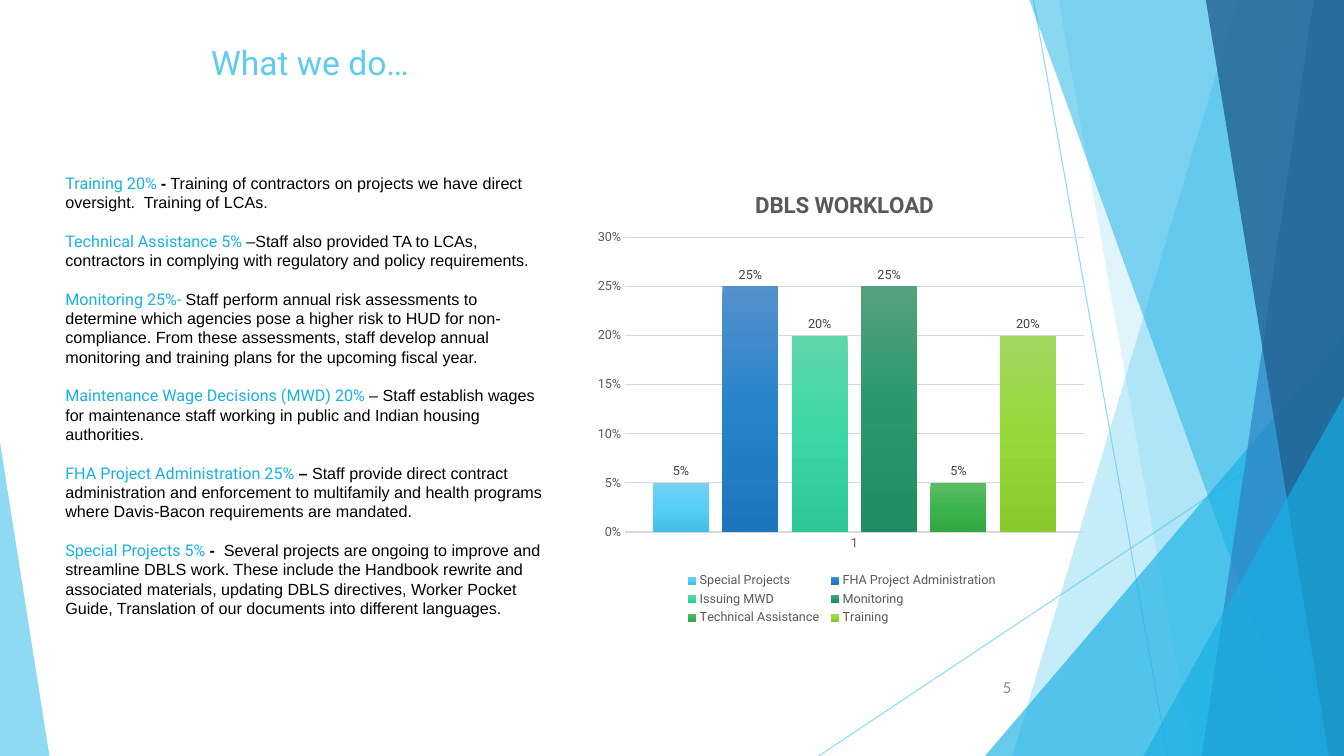
from lxml import etree
from pptx import Presentation
from pptx.chart.data import CategoryChartData
from pptx.dml.color import RGBColor
from pptx.enum.chart import XL_CHART_TYPE, XL_LABEL_POSITION, XL_LEGEND_POSITION, XL_TICK_MARK
from pptx.enum.shapes import MSO_CONNECTOR, MSO_SHAPE
from pptx.enum.text import MSO_ANCHOR, PP_ALIGN
from pptx.oxml.ns import qn
from pptx.util import Inches, Pt

WIDTH, HEIGHT = 13.33, 7.5
SKY, AZURE, BLUE, NAVY = "5FCBEF", "17B0E4", "2E83C3", "226292"
GREY, RULE = "595959", "D9D9D9"

DUTIES = [
    ("Training 20% ", "-", " Training of contractors on projects we have direct oversight.  Training of LCAs."),
    ("Technical Assistance 5% ", "",
     "–Staff also provided TA to LCAs, contractors in complying with regulatory and policy requirements."),
    ("Monitoring 25%- ", "",
     "Staff perform annual risk assessments to determine which agencies pose a higher risk to HUD for "
     "non-compliance. From these assessments, staff develop annual monitoring and training plans for "
     "the upcoming fiscal year."),
    ("Maintenance Wage Decisions (MWD) 20% ", "",
     "– Staff establish wages for maintenance staff working in public and Indian housing authorities."),
    ("FHA Project Administration 25% ", "– ",
     "Staff provide direct contract administration and enforcement to multifamily and health programs "
     "where Davis-Bacon requirements are mandated."),
    ("Special Projects 5% ", "- ",
     " Several projects are ongoing to improve and streamline DBLS work. These include the Handbook "
     "rewrite and associated materials, updating DBLS directives, Worker Pocket Guide, Translation of "
     "our documents into different languages."),
]

WORKLOAD = [
    ("Special Projects", 0.05, ("75D1F3", "58CFF6", "45BCE3")),
    ("FHA Project Administration", 0.25, ("5491CD", "2784CA", "1C76BB")),
    ("Issuing MWD", 0.2, ("60D6AC", "3BD7A4", "2CC795")),
    ("Monitoring", 0.25, ("54A17D", "29996C", "208D61")),
    ("Technical Assistance", 0.05, ("5EBB68", "3DB54D", "31A641")),
    ("Training", 0.2, ("A1D75F", "97D83A", "88C82B")),
]


def color(value):
    return RGBColor.from_string(value)


def style_font(font, size, tint, face="Roboto", bold=False):
    font.size, font.name, font.bold = Pt(size), face, bold
    font.color.rgb = color(tint)


def add_text(page, box, text, size=12, tint=GREY, face="Roboto", align=PP_ALIGN.LEFT,
             anchor=MSO_ANCHOR.MIDDLE, gap=0):
    """Text is a string, or a list of paragraphs, each a list of (text, format) spans."""
    frame = page.shapes.add_textbox(*map(Inches, box)).text_frame
    frame.word_wrap, frame.vertical_anchor = True, anchor
    paragraphs = [[(text, {})]] if isinstance(text, str) else text
    for index, spans in enumerate(paragraphs):
        para = frame.add_paragraph() if index else frame.paragraphs[0]
        para.alignment = align
        para.space_before = Pt(gap if index else 0)
        for words, changes in spans:
            span = para.add_run()
            span.text = words
            style_font(span.font, **{"size": size, "tint": tint, "face": face, **changes})


def set_opacity(shape, percent):
    for tag in shape._element.spPr.iter(qn("a:srgbClr")):
        etree.SubElement(tag, qn("a:alpha")).set("val", str(percent * 1000))


def paint(shape, tint, opacity):
    shape.shadow.inherit = False
    shape.fill.solid()
    shape.fill.fore_color.rgb = color(tint)
    shape.line.fill.background()
    set_opacity(shape, opacity)


def add_ray(page, start, end):
    ray = page.shapes.add_connector(MSO_CONNECTOR.STRAIGHT, *map(Inches, start + end))
    ray.line.color.rgb = color(SKY)
    ray.line.width = Pt(0.75)
    set_opacity(ray, 70)
    etree.SubElement(ray._element.spPr, qn("a:effectLst"))


def add_band(page, top_left, bottom_left, tint, opacity):
    """A band from a slanted left edge to the right edge of the page."""
    corners = [(top_left, 0), (WIDTH, 0), (WIDTH, HEIGHT), (bottom_left, HEIGHT)]
    points = [(Inches(x), Inches(y)) for x, y in corners]
    builder = page.shapes.build_freeform(*points[0])
    builder.add_line_segments(points[1:], close=True)
    paint(builder.convert_to_shape(), tint, opacity)


def add_corner(page, left, top, width, peak, tint, opacity):
    """A triangle that stands on the bottom edge of the page."""
    box = (left, top, width, HEIGHT - top)
    corner = page.shapes.add_shape(MSO_SHAPE.ISOSCELES_TRIANGLE, *map(Inches, box))
    corner.adjustments[0] = peak
    paint(corner, tint, opacity)


def add_facets(page):
    add_ray(page, (10.25, 0), (11.58, HEIGHT))
    add_ray(page, (WIDTH, 4.03), (8.12, HEIGHT))
    add_band(page, 12.28, 10.04, SKY, 36)
    add_band(page, 10.5, 11.83, SKY, 20)
    add_corner(page, 9.77, 3.33, 3.56, 1, AZURE, 66)
    add_band(page, 10.21, 12.91, AZURE, 50)
    add_band(page, 13.03, 11.92, BLUE, 70)
    add_band(page, 11.96, 13.18, NAVY, 80)
    add_corner(page, 11.34, 3.93, 1.99, 1, AZURE, 66)
    add_corner(page, 0, 4.39, 0.49, 0, SKY, 70)


def add_duties(page, box):
    black = {"tint": "000000", "face": "Arial"}
    paragraphs = []
    for name, dash, detail in DUTIES:
        spans = [(name, {"tint": AZURE}), (dash, {**black, "bold": True}), (detail, black)]
        paragraphs.append([span for span in spans if span[0]])
    add_text(page, box, paragraphs, size=11.5, anchor=MSO_ANCHOR.TOP, gap=13.8)


def fill_gradient(series, tints):
    series.format.fill.gradient()
    series.format.fill.gradient_angle = 270
    stops = series._element.spPr.find(".//" + qn("a:gsLst"))
    stops[:] = []
    for index, tint in enumerate(tints):
        stop = etree.SubElement(stops, qn("a:gs"), pos=str(index * 50000))
        etree.SubElement(stop, qn("a:srgbClr"), val=tint)


def place_part(element, index, **fractions):
    """Put a chart part at fractions of the chart area."""
    for old in element.findall(qn("c:layout")):
        element.remove(old)
    layout = etree.Element(qn("c:layout"))
    element.insert(index, layout)
    manual = etree.SubElement(layout, qn("c:manualLayout"))
    if index == 0:
        etree.SubElement(manual, qn("c:layoutTarget"), val="inner")
    for axis in ("x", "y"):
        etree.SubElement(manual, qn(f"c:{axis}Mode"), val="edge")
    for name, value in fractions.items():
        etree.SubElement(manual, qn(f"c:{name}"), val=str(value))


def style_axes(chart):
    for axis in (chart.category_axis, chart.value_axis):
        axis.major_tick_mark = axis.minor_tick_mark = XL_TICK_MARK.NONE
        style_font(axis.tick_labels.font, 9, GREY)
    chart.category_axis.format.line.color.rgb = color(RULE)
    chart.category_axis.format.line.width = Pt(1)
    scale = chart.value_axis
    scale.minimum_scale, scale.maximum_scale, scale.major_unit = 0, 0.3, 0.05
    scale.tick_labels.number_format, scale.tick_labels.number_format_is_linked = "0%", False
    scale.format.line.fill.background()
    scale.major_gridlines.format.line.color.rgb = color(RULE)
    scale.major_gridlines.format.line.width = Pt(0.75)


def add_workload_chart(page, box):
    data = CategoryChartData(number_format="0%")
    data.categories = ["1"]
    for name, share, _ in WORKLOAD:
        data.add_series(name, [share])
    chart = page.shapes.add_chart(XL_CHART_TYPE.COLUMN_CLUSTERED, *map(Inches, box), data).chart
    style_font(chart.font, 10, "000000")
    chart.has_title = True
    para = chart.chart_title.text_frame.paragraphs[0]
    para.text = "DBLS WORKLOAD"
    style_font(para.runs[0].font, 16, GREY, bold=True)
    chart.chart_title.include_in_layout = False
    chart.has_legend = True
    chart.legend.position = XL_LEGEND_POSITION.BOTTOM
    chart.legend.include_in_layout = False
    style_font(chart.legend.font, 9, GREY)
    style_axes(chart)
    plot = chart.plots[0]
    plot.gap_width, plot.overlap, plot.vary_by_categories = 100, -24, False
    for series, (_, _, tints) in zip(plot.series, WORKLOAD):
        fill_gradient(series, tints)
        labels = series.data_labels
        labels.show_value, labels.position = True, XL_LABEL_POSITION.OUTSIDE_END
        labels.number_format, labels.number_format_is_linked = "0%", False
        style_font(labels.font, 9, "404040")
    place_part(plot._element.getparent(), 0, x=0.07, y=0.15, w=0.91, h=0.64)
    place_part(chart.chart_title._element, 1, x=0.32, y=0.04)
    place_part(chart.legend._element, 1, x=0.18, y=0.87, w=0.64, h=0.13)


def main():
    deck = Presentation()
    deck.slide_width, deck.slide_height = Inches(WIDTH), Inches(HEIGHT)
    page = deck.slides.add_slide(deck.slide_layouts[6])
    add_facets(page)
    add_text(page, (0.3, 0.25, 5.55, 0.73), "What we do…", size=24, tint=SKY, align=PP_ALIGN.CENTER)
    add_text(page, (9.38, 6.61, 0.75, 0.4), "5", tint="8C8C8C", face="Calibri", align=PP_ALIGN.RIGHT)
    add_duties(page, (0.55, 1.67, 5.04, 5.13))
    add_workload_chart(page, (5.85, 1.67, 5, 4.57))
    deck.save("out.pptx")


if __name__ == "__main__":
    main()
